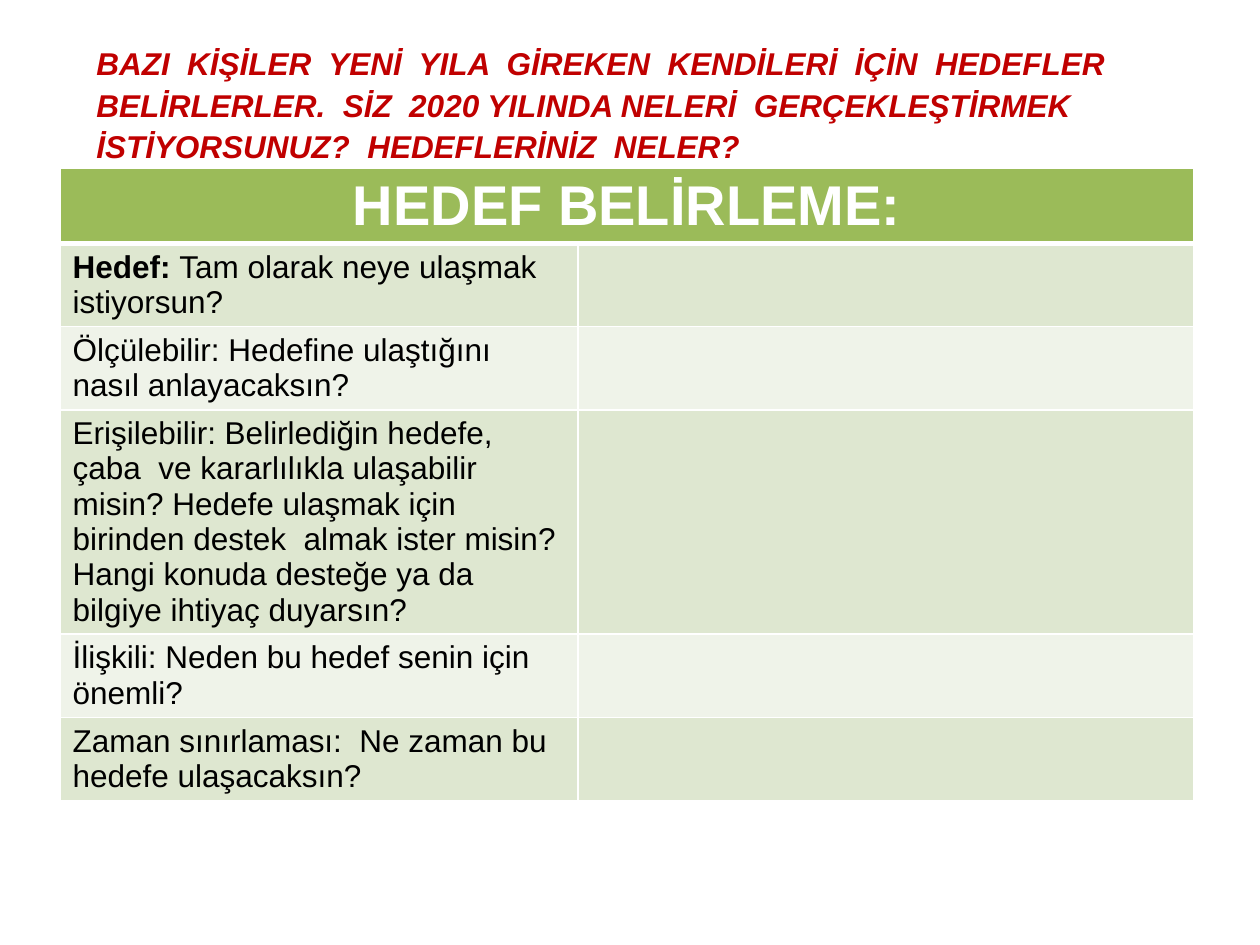
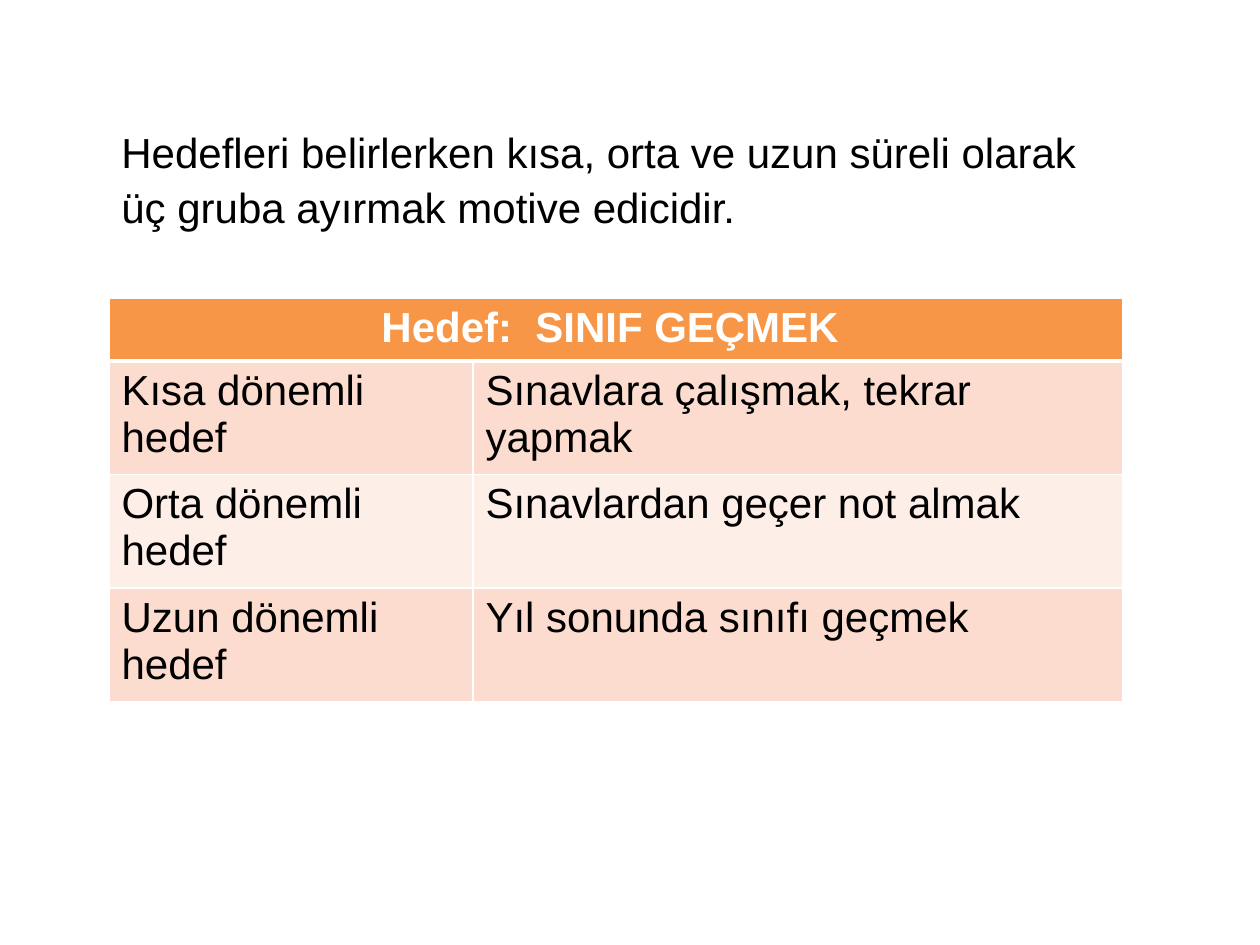
from lxml import etree
from pptx import Presentation
from pptx import util as u
from pptx.dml.color import RGBColor
from pptx.enum import text
from pptx.oxml import ns

EMU_PER_PX = 914400 / 126
FONT = "Arial"
COLORS = {
    "white": "FFFFFF", "black": "000000", "red": "C00000",
    "green": "9BBB59", "green_band": "DEE7D0", "green_light": "EFF3E9",
    "orange": "F79646", "orange_band": "FCDCCE", "orange_light": "FDEEE8",
}
BODY = {"size": u.Pt(18), "bold": False}
HEADING = {"size": u.Pt(18), "bold": True, "italic": True}
LARGE = {"size": u.Pt(24), "bold": False}

GOAL_QUESTIONS = [
    ("Hedef: Tam olarak neye ulaşmak istiyorsun?", ""),
    ("Ölçülebilir: Hedefine ulaştığını nasıl anlayacaksın?", ""),
    ("Erişilebilir: Belirlediğin hedefe, çaba  ve kararlılıkla ulaşabilir misin? "
     "Hedefe ulaşmak için birinden destek  almak ister misin? "
     "Hangi konuda desteğe ya da bilgiye ihtiyaç duyarsın?", ""),
    ("İlişkili: Neden bu hedef senin için önemli?", ""),
    ("Zaman sınırlaması:  Ne zaman bu hedefe ulaşacaksın?", ""),
]
GOAL_TERMS = [
    ("Kısa dönemli hedef", "Sınavlara çalışmak, tekrar yapmak"),
    ("Orta dönemli hedef", "Sınavlardan geçer not almak"),
    ("Uzun dönemli hedef", "Yıl sonunda sınıfı geçmek"),
]


def px(length):
    return u.Emu(round(length * EMU_PER_PX))


def color(name):
    return RGBColor.from_string(COLORS[name])


def add_run(paragraph, words, color_name, formats):
    run = paragraph.add_run()
    run.text = words
    run.font.name = FONT
    run.font.color.rgb = color(color_name)
    for attribute, value in formats.items():
        setattr(run.font, attribute, value)


def add_text(slide, box, words, color_name, formats, top_inset=6):
    shape = slide.shapes.add_textbox(*map(px, box))
    frame = shape.text_frame
    frame.word_wrap = True
    frame.margin_top = px(top_inset)
    paragraph = frame.paragraphs[0]
    paragraph.line_spacing = 1.09
    add_run(paragraph, words, color_name, formats)


def set_borders(cell, bottom=1, top=1):
    """Draw white lines, with widths in points, around a cell."""
    properties = cell._tc.get_or_add_tcPr()
    widths = {"a:lnL": 1, "a:lnR": 1, "a:lnT": top, "a:lnB": bottom}
    for index, (tag, width) in enumerate(widths.items()):
        line = etree.Element(ns.qn(tag), w=str(u.Pt(width)))
        fill = etree.SubElement(line, ns.qn("a:solidFill"))
        etree.SubElement(fill, ns.qn("a:srgbClr"), val=COLORS["white"])
        properties.insert(index, line)


def paint(cell, color_name):
    cell.fill.solid()
    cell.fill.fore_color.rgb = color(color_name)


def add_goal_table(slide, origin, widths, heights, theme, title, title_size,
                   rows, formats, bold_lead=""):
    """Add a table with one merged header and rows in two alternating tints."""
    frame = slide.shapes.add_table(len(heights), len(widths), *map(px, origin),
                                   px(sum(widths)), px(sum(heights)))
    table = frame.table
    for column, width in zip(table.columns, widths):
        column.width = px(width)
    for row, height in zip(table.rows, heights):
        row.height = px(height)

    header = table.cell(0, 0)
    header.merge(table.cell(0, 1))
    paragraph = header.text_frame.paragraphs[0]
    paragraph.alignment = text.PP_ALIGN.CENTER
    add_run(paragraph, title, "white", {"size": u.Pt(title_size), "bold": True})
    for cell in table.rows[0].cells:
        paint(cell, theme)
        set_borders(cell, bottom=3)

    for number, entries in enumerate(rows, start=1):
        tint = theme + ("_band" if number % 2 else "_light")
        for column, words in enumerate(entries):
            cell = table.cell(number, column)
            paint(cell, tint)
            set_borders(cell, top=3 if number == 1 else 1)
            paragraph = cell.text_frame.paragraphs[0]
            if bold_lead and words.startswith(bold_lead):
                add_run(paragraph, bold_lead, "black", {**formats, "bold": True})
                words = words.removeprefix(bold_lead)
            if words:
                add_run(paragraph, words, "black", formats)


def build_goal_setting(slide):
    add_goal_table(slide, (60, 168), (518, 616), (75, 83, 83, 224, 83, 83),
                   "green", "HEDEF BELİRLEME:", 32, GOAL_QUESTIONS, BODY,
                   bold_lead="Hedef: ")
    add_text(slide, (84, 35, 1123, 90),
             "BAZI  KİŞİLER  YENİ  YILA  GİREKEN  KENDİLERİ  İÇİN  HEDEFLER  "
             "BELİRLERLER.  SİZ  2020 YILINDA NELERİ  GERÇEKLEŞTİRMEK  "
             "İSTİYORSUNUZ?  HEDEFLERİNİZ  NELER?", "red", HEADING)


def build_goal_terms(slide):
    add_goal_table(slide, (109, 298), (364, 650), (59, 106, 106, 106),
                   "orange", "Hedef:  SINIF GEÇMEK ", 24, GOAL_TERMS, LARGE)
    add_text(slide, (109, 78, 1014, 280),
             "Hedefleri belirlerken kısa, orta ve uzun süreli olarak "
             "üç gruba ayırmak motive edicidir.", "black", LARGE, top_inset=44)


def main():
    presentation = Presentation()
    presentation.slide_width = px(1260)
    presentation.slide_height = px(945)
    blank = presentation.slide_layouts[6]
    for build in (build_goal_setting, build_goal_terms):
        build(presentation.slides.add_slide(blank))
    presentation.save("out.pptx")


if __name__ == "__main__":
    main()
